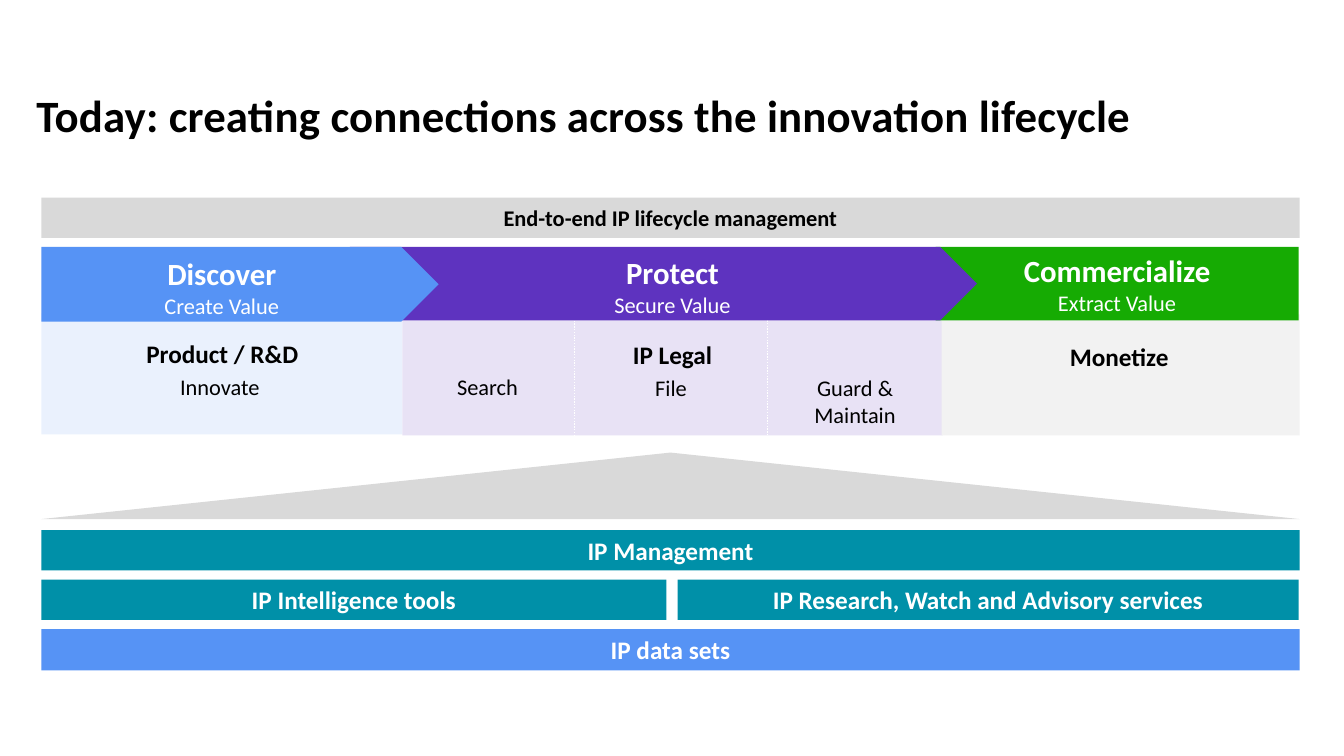
from lxml.etree import SubElement
from pptx import Presentation
from pptx.dml.color import RGBColor
from pptx.enum.dml import MSO_LINE
from pptx.enum.shapes import MSO_CONNECTOR, MSO_SHAPE
from pptx.enum.text import MSO_ANCHOR as ANCHOR, PP_ALIGN as ALIGN
from pptx.oxml.ns import qn
from pptx.util import Pt

PX = 9144  # 100 px to the inch
FONT = "Calibri"
BLACK = RGBColor(0x00, 0x00, 0x00)
WHITE = RGBColor(0xFF, 0xFF, 0xFF)
BLUE = RGBColor(0x56, 0x93, 0xF5)
PURPLE = RGBColor(0x5E, 0x33, 0xBF)
GREEN = RGBColor(0x16, 0xAB, 0x03)
TEAL = RGBColor(0x00, 0x90, 0xA8)
GREY = RGBColor(0xD9, 0xD9, 0xD9)
PALE_GREY = RGBColor(0xF2, 0xF2, 0xF2)
LEFT, FULL_WIDTH = 41, 1248

deck = Presentation()
deck.slide_width, deck.slide_height = 1333 * PX, 750 * PX
slide = deck.slides.add_slide(deck.slide_layouts[6])


def add_block(kind, box, color, opacity=None):
    block = slide.shapes.add_shape(kind, *[n * PX for n in box])
    block.shadow.inherit = False
    block.fill.solid()
    block.fill.fore_color.rgb = color
    block.line.fill.background()
    if opacity:
        tint = block.fill._xPr.find(qn("a:solidFill"))[0]
        SubElement(tint, qn("a:alpha"), val=str(opacity * 1000))
    return block


def write(text, box=None, shape=None, sizes=(16,), bold=False, color=BLACK,
          align=ALIGN.CENTER, anchor=ANCHOR.TOP, inset=None, spacing=None, tracking=None):
    """Write one paragraph per line of text; only the first can be bold."""
    target = shape or slide.shapes.add_textbox(*[n * PX for n in box])
    frame = target.text_frame
    frame.word_wrap = True
    frame.vertical_anchor = anchor
    if inset is not None:
        frame.margin_left = frame.margin_right = inset * PX
        frame.margin_top = frame.margin_bottom = inset * PX
    frame.text = text
    for index, (paragraph, size) in enumerate(zip(frame.paragraphs, sizes)):
        paragraph.alignment = align
        if spacing:
            paragraph.line_spacing = spacing
        font = paragraph.runs[0].font
        font.name, font.size = FONT, Pt(size)
        font.bold = bold and index == 0
        font.color.rgb = color
        if tracking:
            font._element.set("spc", str(tracking))


# Title
write("Today: creating connections across the innovation lifecycle",
      box=(36, 95, 1248, 51), sizes=(32,), bold=True, align=ALIGN.LEFT,
      inset=0, spacing=0.85, tracking=10)

# Pale panels under the stages
for box, color, opacity in [
    ((LEFT, 311, 358, 120), BLUE, 12),
    ((399, 314, 536, 118), PURPLE, 14),
    ((934, 312, 355, 120), PALE_GREY, None),
]:
    add_block(MSO_SHAPE.RECTANGLE, box, color, opacity)

# Dotted dividers between the legal steps
for x, top, bottom in [(761, 268, 654), (570, 263, 469)]:
    divider = slide.shapes.add_connector(
        MSO_CONNECTOR.STRAIGHT, x * PX, top * PX, x * PX, bottom * PX)
    divider.line.color.rgb = WHITE
    divider.line.width = Pt(1)
    divider.line.dash_style = MSO_LINE.ROUND_DOT
    SubElement(divider._element.spPr, qn("a:effectLst"))

# Stage arrows, from right to left so that each tip overlaps the next stage
commercialize = add_block(MSO_SHAPE.RECTANGLE, (928, 245, 360, 73), GREEN)
add_block(MSO_SHAPE.PENTAGON, (347, 245, 622, 73), PURPLE)
add_block(MSO_SHAPE.PENTAGON, (LEFT, 245, 394, 74), BLUE)

stage_format = dict(sizes=(22, 16), bold=True, color=WHITE)
write("Commercialize\nExtract Value", shape=commercialize, anchor=ANCHOR.MIDDLE, **stage_format)
write("Discover\nCreate Value", box=(LEFT, 248, 358, 74), **stage_format)
write("Protect\nSecure Value", box=(399, 247, 536, 74), **stage_format)

# Teams
for team, box in [
    ("Product / R&D", (LEFT, 331, 359, 40)),
    ("IP Legal", (399, 332, 536, 40)),
    ("Monetize", (934, 334, 352, 40)),
]:
    write(team, box=box, sizes=(18,), bold=True)

# Steps of each team
for step, box in [
    ("Innovate", (39, 365, 358, 37)),
    ("Search", (398, 365, 171, 37)),
    ("File", (574, 366, 183, 37)),
    ("Guard & Maintain", (762, 366, 172, 64)),
]:
    write(step, box=box)

# Full-width and half-width bars
for label, box, fill, color, size in [
    ("End-to-end IP lifecycle management", (LEFT, 196, FULL_WIDTH, 40), GREY, BLACK, 16),
    ("IP Management", (LEFT, 526, FULL_WIDTH, 40), TEAL, WHITE, 18),
    ("IP Intelligence tools", (LEFT, 575, 620, 40), TEAL, WHITE, 18),
    ("IP Research, Watch and Advisory services", (672, 575, 616, 40), TEAL, WHITE, 18),
    ("IP data sets", (LEFT, 624, FULL_WIDTH, 41), BLUE, WHITE, 18),
]:
    bar = add_block(MSO_SHAPE.RECTANGLE, box, fill)
    write(label, shape=bar, sizes=(size,), bold=True, color=color, anchor=ANCHOR.MIDDLE)

# Wedge linking the offering to the lifecycle
add_block(MSO_SHAPE.ISOSCELES_TRIANGLE, (LEFT, 449, FULL_WIDTH, 66), GREY)

deck.save("out.pptx")
